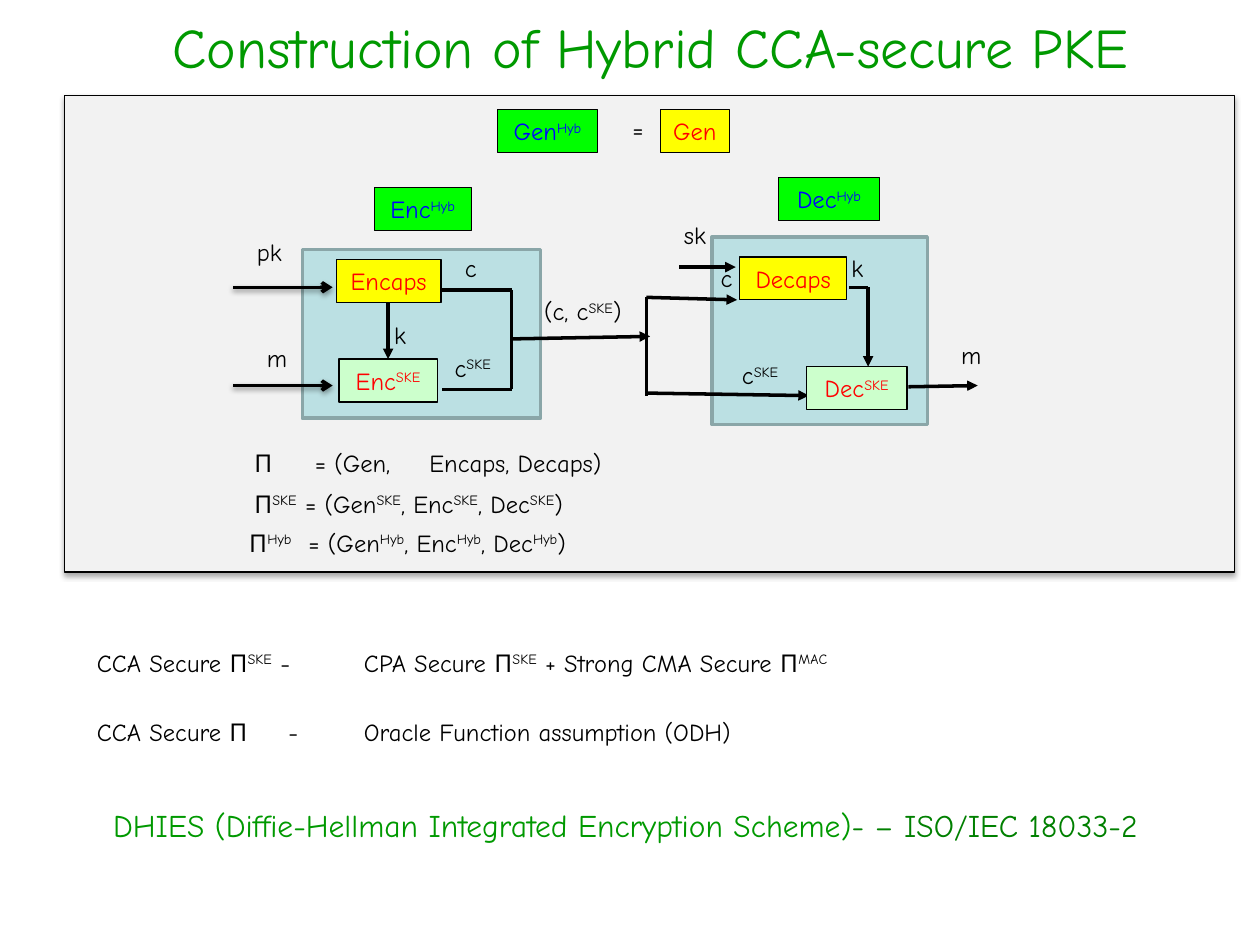
from lxml.etree import SubElement
from pptx import Presentation
from pptx.dml.color import RGBColor
from pptx.enum.shapes import MSO_CONNECTOR, MSO_SHAPE
from pptx.enum.text import PP_ALIGN
from pptx.oxml.ns import qn
from pptx.util import Inches, Pt

COLORS = {
    "black": "000000", "panel": "F2F2F2", "lime": "00FF00", "yellow": "FFFF00",
    "mint": "CCFFCC", "teal": "BBE0E3", "teal_edge": "8AA6A8", "blue": "0000FF",
    "red": "FF0000", "green": "009900", "dark_green": "008000",
}
FONT = "Comic Neue"
ROW = 0.34


def color(name):
    return RGBColor.from_string(COLORS[name])


def add_shadow(shape, opacity, distance):
    effects = SubElement(shape._element.spPr, qn("a:effectLst"))
    shadow = SubElement(effects, qn("a:outerShdw"), blurRad=str(Pt(3.1)), dist=str(Pt(distance)),
                        dir="5400000", rotWithShape="0")
    tint = SubElement(shadow, qn("a:srgbClr"), val=COLORS["black"])
    SubElement(tint, qn("a:alpha"), val=str(opacity * 1000))


def write(shape, text, ink="black", size=14, align=PP_ALIGN.LEFT, wrap=True, tabs=()):
    frame = shape.text_frame
    frame.word_wrap = wrap
    paragraph = frame.paragraphs[0]
    paragraph.alignment = align
    paragraph.font.name = FONT
    paragraph.font.size = Pt(size)
    paragraph.font.color.rgb = color(ink)
    for index, part in enumerate(text.split("^")):
        if part:
            run = paragraph.add_run()
            run.text = part
            if index % 2:
                run._r.get_or_add_rPr().set("baseline", "30000")
    if tabs:
        properties = paragraph._p.get_or_add_pPr()
        tab_list = properties.makeelement(qn("a:tabLst"), {})
        properties.find(qn("a:defRPr")).addprevious(tab_list)
        for position in tabs:
            SubElement(tab_list, qn("a:tab"), pos=str(Inches(position)), algn="l")
    return paragraph


def add_label(slide, left, top, width, text, height=ROW, **style):
    box = slide.shapes.add_textbox(Inches(left), Inches(top), Inches(width), Inches(height))
    return write(box, text, **style)


def add_box(slide, left, top, width, height, fill, edge="black", weight=0.75):
    box = slide.shapes.add_shape(MSO_SHAPE.RECTANGLE, Inches(left), Inches(top), Inches(width), Inches(height))
    box.fill.solid()
    box.fill.fore_color.rgb = color(fill)
    box.line.color.rgb = color(edge)
    box.line.width = Pt(weight)
    return box


def add_node(slide, left, top, width, text, fill, ink="red"):
    box = add_box(slide, left, top, width, ROW, fill)
    box.shadow.inherit = False
    write(box, text, ink, align=PP_ALIGN.CENTER, wrap=False)


def add_line(slide, left, top, points, head=None, shadow=False):
    x1, y1, x2, y2 = points
    line = slide.shapes.add_connector(MSO_CONNECTOR.STRAIGHT, Inches(left + x1), Inches(top + y1),
                                      Inches(left + x2), Inches(top + y2))
    line.line.color.rgb = color("black")
    line.line.width = Pt(2)
    if head:
        SubElement(line.line._get_or_add_ln(), qn("a:tailEnd"), type=head)
    if shadow:
        add_shadow(line, 38, 1.6)
    else:
        SubElement(line._element.spPr, qn("a:effectLst"))


def draw_diagram(slide, left, top, size, wires, arrows, nodes, labels):
    box = add_box(slide, left, top, *size, "teal", "teal_edge", 2)
    box.shadow.inherit = False
    for points in wires:
        add_line(slide, left, top, points)
    for points in arrows:
        add_line(slide, left, top, points, "triangle")
    for x, y, width, *style in nodes:
        add_node(slide, left + x, top + y, width, *style)
    for x, y, width, text in labels:
        add_label(slide, left + x, top + y, width, text)


def draw_encryption(slide, left, top):
    draw_diagram(
        slide, left, top, (1.89, 1.34),
        wires=[(1.11, 0.32, 1.66, 0.32), (1.66, 0.32, 1.66, 1.11), (1.11, 1.11, 1.66, 1.11)],
        arrows=[(1.66, 0.71, 2.76, 0.69), (0.68, 0.42, 0.68, 0.87)],
        nodes=[(0.57, -0.49, 0.77, "Enc^Hyb", "lime", "blue"),
               (0.27, 0.08, 0.83, "Encaps", "yellow"),
               (0.29, 0.87, 0.78, "Enc^SKE", "mint")],
        labels=[(-0.46, -0.15, 0.7, "pk"), (-0.38, 0.69, 0.46, "m"), (1.19, -0.02, 0.55, "c"),
                (0.63, 0.51, 0.46, "k"), (1.11, 0.77, 0.55, "c^SKE"), (1.82, 0.32, 1.18, "(c, c^SKE^)")],
    )
    for y in (0.3, 1.08):
        add_line(slide, left, top, (-0.55, y, 0.24, y), "arrow", shadow=True)


def draw_decryption(slide, left, top):
    draw_diagram(
        slide, left, top, (1.71, 1.49),
        wires=[(-0.52, 0.48, -0.52, 1.26), (1.09, 0.4, 1.24, 0.4)],
        arrows=[(-0.52, 0.48, 0.2, 0.5), (-0.26, 0.24, 0.19, 0.24), (1.24, 0.4, 1.24, 1.03),
                (-0.52, 1.24, 0.77, 1.26), (1.56, 1.19, 2.11, 1.18)],
        nodes=[(0.53, -0.47, 0.8, "Dec^Hyb", "lime", "blue"),
               (0.22, 0.16, 0.85, "Decaps", "yellow"),
               (0.75, 1.03, 0.8, "Dec^SKE", "mint")],
        labels=[(-0.32, -0.18, 0.52, "sk"), (-0.03, 0.16, 0.35, "c"), (1.01, 0.08, 0.46, "k"),
                (0.14, 0.93, 0.71, "c^SKE"), (1.88, 0.77, 0.46, "m")],
    )


def draw_schemes(slide, left, top):
    add_label(slide, left, top, 3.03, "Π\t= (Gen,\tEncaps, Decaps)", tabs=(0.48, 1.39))
    add_label(slide, left, top + 0.32, 3.03, "Π^SKE^ = (Gen^SKE^, Enc^SKE^, Dec^SKE^)")
    add_label(slide, left - 0.04, top + 0.63, 3.03, "Π^Hyb^\t= (Gen^Hyb^, Enc^Hyb^, Dec^Hyb^)", tabs=(0.47,))


def draw_construction(slide, left, top, width, height):
    panel = add_box(slide, left, top, width, height, "panel")
    add_shadow(panel, 35, 1.8)
    add_node(slide, left + 3.44, top + 0.11, 0.79, "Gen^Hyb", "lime", "blue")
    add_label(slide, left + 4.41, top + 0.1, 0.4, "=")
    add_node(slide, left + 4.73, top + 0.11, 0.55, "Gen", "yellow")
    draw_encryption(slide, left + 1.89, top + 1.22)
    draw_decryption(slide, left + 5.14, top + 1.12)
    draw_schemes(slide, left + 1.41, top + 2.75)


def draw_assumptions(slide, left, top):
    add_label(slide, left, top, 1.95, "CCA Secure Π^SKE^ -")
    add_label(slide, left + 2.12, top, 4.28, "CPA Secure Π^SKE^ + Strong CMA Secure Π^MAC")
    add_label(slide, left, top + 0.55, 8.74, "CCA Secure Π\t-\tOracle Function assumption (ODH)", tabs=(1.52, 2.12))


def draw_headings(slide):
    heading = {"ink": "green", "align": PP_ALIGN.CENTER, "wrap": False}
    add_label(slide, 0.97, 0.05, 8.54, "Construction of Hybrid CCA-secure PKE ", 0.64, size=32, **heading)
    standard = add_label(slide, 0.35, 6.35, 9.31, "DHIES (Diffie-Hellman Integrated Encryption Scheme)",
                         0.4, size=18, **heading)
    run = standard.add_run()
    run.text = "- – ISO/IEC 18033-2 "
    run.font.color.rgb = color("dark_green")


def main():
    presentation = Presentation()
    presentation.slide_width = Inches(10)
    presentation.slide_height = Inches(7.5)
    slide = presentation.slides.add_slide(presentation.slide_layouts[6])
    draw_construction(slide, 0.51, 0.76, 9.29, 3.78)
    draw_assumptions(slide, 0.67, 5.09)
    draw_headings(slide)
    presentation.save("out.pptx")


if __name__ == "__main__":
    main()
